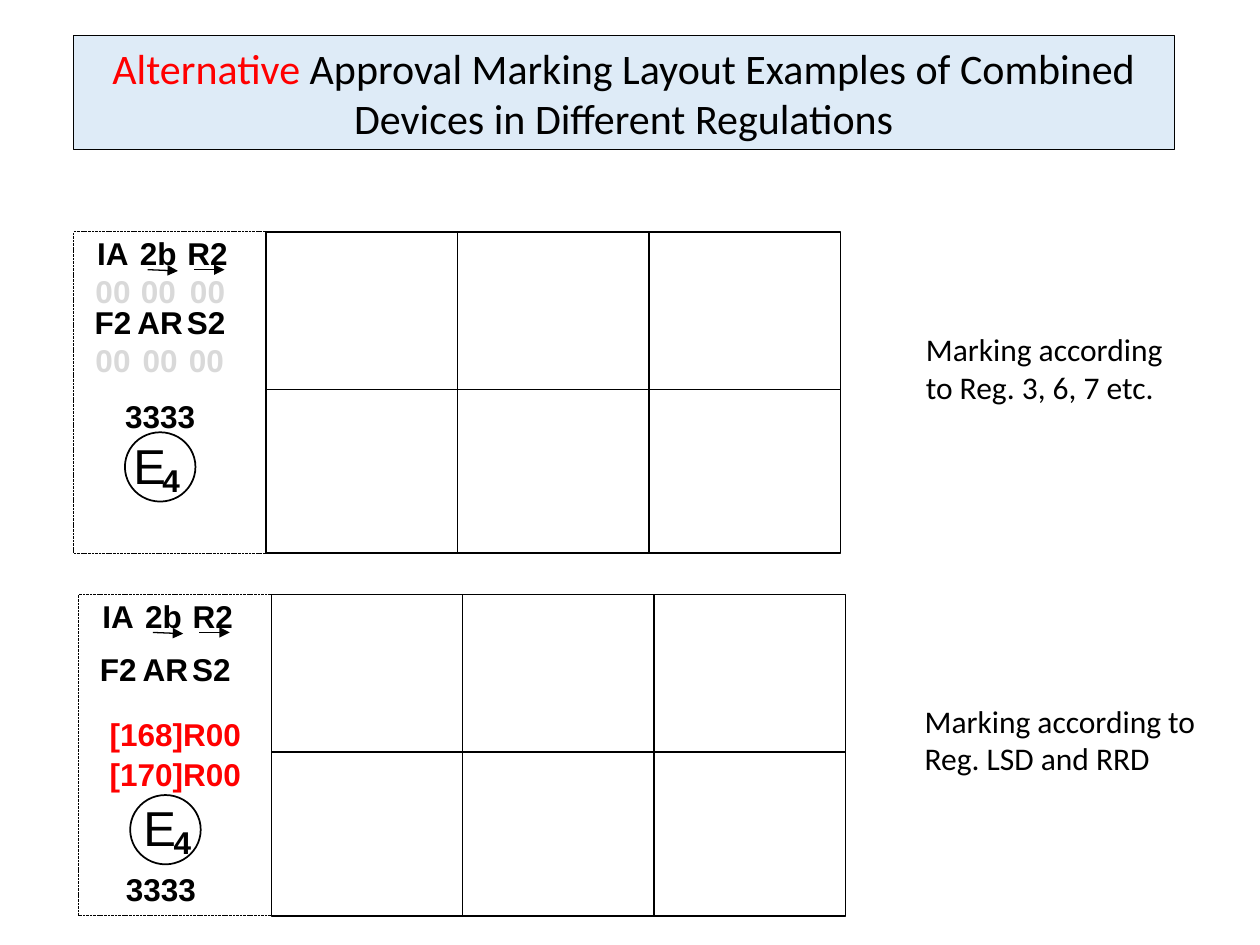
from dataclasses import dataclass

import pptx
import pptx.dml.color
import pptx.enum.dml
import pptx.enum.shapes
import pptx.enum.text
import pptx.oxml
import pptx.oxml.ns
import pptx.util

Pt = pptx.util.Pt
ALIGN = pptx.enum.text.PP_ALIGN
SHAPE = pptx.enum.shapes.MSO_SHAPE


@dataclass(frozen=True)
class Theme:
    black: str = "000000"
    red: str = "FF0000"
    grey: str = "D9D9D9"
    title_fill: str = "DEEBF7"
    title_size: float = 24
    text_size: float = 18
    letter_size: float = 28
    mark_font: str = "Arial"
    note_font: str = "Calibri"


@dataclass(frozen=True)
class Label:
    """Text placed relative to its panel; every line is (text, colour)."""
    left: float
    top: float
    width: float
    lines: tuple
    size: float = 18
    bold: bool = True
    align: ALIGN = ALIGN.CENTER


@dataclass(frozen=True)
class Panel:
    left: float
    top: float
    labels: tuple


THEME = Theme()
PANEL_HEIGHT = 183.6
GRID_OFFSET, COLUMN_WIDTH, COLUMNS, ROW_HEIGHT = 110.1, 109.4, 3, 90
DASH_LENGTH = 152.8
SYMBOL_WIDTH = 51.1
SYMBOL_ROWS = (
    (("IA", -2.9), ("2b", 23), ("R2", 51.1)),
    (("F2", -2.9), ("AR", 24), ("S2", 50.4)),
)
ARROWS = ((42.5, 21.6, 59.8, 22.3), (69.1, 21.6, 86.4, 21.6))


def rgb(colour: str):
    return pptx.dml.color.RGBColor.from_string(colour)


def add_run(paragraph, text: str, *, size: float, font: str,
            colour: str = THEME.black, bold: bool = False) -> None:
    run = paragraph.add_run()
    run.text = text
    run.font.size, run.font.name, run.font.bold = Pt(size), font, bold
    run.font.color.rgb = rgb(colour)


def add_text(slide, lines: tuple, *, left: float, top: float, width: float,
             size: float = THEME.text_size, font: str = THEME.mark_font,
             bold: bool = True, align=ALIGN.LEFT) -> None:
    height = len(lines) * size * 1.2 + 7.2
    box = slide.shapes.add_textbox(Pt(left), Pt(top), Pt(width), Pt(height))
    frame = box.text_frame
    frame.word_wrap = True
    for index, (text, colour) in enumerate(lines):
        paragraph = frame.add_paragraph() if index else frame.paragraphs[0]
        paragraph.alignment = align
        add_run(paragraph, text, size=size, font=font, colour=colour, bold=bold)


def add_line(slide, x1: float, y1: float, x2: float, y2: float, *,
             width: float = 0.75, dashed: bool = False, arrow: bool = False) -> None:
    connector = slide.shapes.add_connector(
        pptx.enum.shapes.MSO_CONNECTOR.STRAIGHT, Pt(x1), Pt(y1), Pt(x2), Pt(y2))
    connector.line.width = Pt(width)
    connector.line.color.rgb = rgb(THEME.black)
    if dashed:
        connector.line.dash_style = pptx.enum.dml.MSO_LINE.SQUARE_DOT
    if arrow:
        head = pptx.oxml.ns.qn("a:tailEnd")
        connector.line._get_or_add_ln().append(
            pptx.oxml.parse_xml(f'<a:tailEnd {pptx.oxml.ns.nsdecls("a")} type="triangle"/>')
            if head else None)
    connector._element.spPr.append(
        pptx.oxml.parse_xml(f'<a:effectLst {pptx.oxml.ns.nsdecls("a")}/>'))


def add_outline(slide, kind, left: float, top: float, width: float,
                height: float, line_width: float) -> None:
    shape = slide.shapes.add_shape(kind, Pt(left), Pt(top), Pt(width), Pt(height))
    shape.shadow.inherit = False
    shape.fill.background()
    shape.line.color.rgb = rgb(THEME.black)
    shape.line.width = Pt(line_width)


def symbol_labels(tops: tuple, second_line: tuple = ()) -> tuple:
    return tuple(
        Label(left, top, SYMBOL_WIDTH, ((text, THEME.black),) + second_line)
        for top, row in zip(tops, SYMBOL_ROWS) for text, left in row)


def draw_panel(slide, panel: Panel) -> None:
    left, top = panel.left, panel.top
    bottom = top + PANEL_HEIGHT
    grid_left = left + GRID_OFFSET
    grid_width = COLUMNS * COLUMN_WIDTH

    # Grid of empty lamp compartments
    add_outline(slide, SHAPE.RECTANGLE, grid_left, top, grid_width, PANEL_HEIGHT, 0.75)
    for column in range(COLUMNS):
        x = grid_left + column * COLUMN_WIDTH
        add_line(slide, x, top, x, bottom)
    add_line(slide, grid_left, top + ROW_HEIGHT, grid_left + grid_width, top + ROW_HEIGHT)

    # Approval mark and its texts
    add_outline(slide, SHAPE.OVAL, left + 29.5, top + 114.5, 40.3, 39.6, 1)
    for label in panel.labels:
        add_text(slide, label.lines, left=left + label.left, top=top + label.top,
                 width=label.width, size=label.size, bold=label.bold, align=label.align)
    for x1, y1, x2, y2 in ARROWS:
        add_line(slide, left + x1, top + y1, left + x2, top + y2, arrow=True)

    # Dashed open side
    for y in (top, bottom):
        add_line(slide, left + DASH_LENGTH, y, left, y, width=0.5, dashed=True)
    add_line(slide, left, bottom, left, top, width=0.5, dashed=True)


def circle_labels(left: float, top: float, gap: float) -> tuple:
    return (
        Label(left, top, 46, (("E", THEME.black),), THEME.letter_size, False, ALIGN.LEFT),
        Label(left + gap, top + 14.4, 31.7, (("4", THEME.black),), align=ALIGN.LEFT),
    )


def draw_title(slide) -> None:
    title = slide.shapes.title
    title.left, title.top, title.width, title.height = Pt(41.8), Pt(20.2), Pt(629.3), Pt(65.4)
    title.fill.solid()
    title.fill.fore_color.rgb = rgb(THEME.title_fill)
    title.line.color.rgb = rgb(THEME.black)
    title.line.width = Pt(0.75)
    frame = title.text_frame
    frame.word_wrap = True
    frame.auto_size = pptx.enum.text.MSO_AUTO_SIZE.NONE
    frame.vertical_anchor = pptx.enum.text.MSO_ANCHOR.MIDDLE
    paragraph = frame.paragraphs[0]
    paragraph.alignment = ALIGN.CENTER
    for text, colour in (
            ("Alternative ", THEME.red),
            ("Approval Marking Layout Examples of Combined Devices in Different Regulations",
             THEME.black)):
        add_run(paragraph, text, size=THEME.title_size, font=THEME.note_font, colour=colour)


def main() -> None:
    presentation = pptx.Presentation()
    presentation.slide_width, presentation.slide_height = Pt(720), Pt(540)
    slide = presentation.slides.add_slide(presentation.slide_layouts[5])
    draw_title(slide)

    panels = (
        Panel(41.9, 132.5, symbol_labels((-2.2, 37.4), (("00", THEME.grey),))
              + circle_labels(27.2, 113, 16.6)
              + (Label(11.5, 90.7, 76.3, (("3333", THEME.black),)),)),
        Panel(44.9, 339.8, symbol_labels((-2.2, 28.1))
              + circle_labels(30, 112.4, 17.3)
              + (Label(-13.8, 65.5, 138.2, (("[168]R00", THEME.red),)),
                 Label(-13.8, 87.9, 138.2, (("[170]R00", THEME.red),)),
                 Label(19.9, 154.1, 59.8, (("3333", THEME.black),), align=ALIGN.LEFT))),
    )
    for panel in panels:
        draw_panel(slide, panel)

    # Notes beside the panels
    for text, left, top, width in (
            ("Marking according to Reg. 3, 6, 7 etc.", 522, 185, 160.6),
            ("Marking according to Reg. LSD and RRD", 521.3, 397.4, 170.6)):
        add_text(slide, ((text, THEME.black),), left=left, top=top, width=width,
                 font=THEME.note_font, bold=False)

    presentation.save("out.pptx")


if __name__ == "__main__":
    main()
